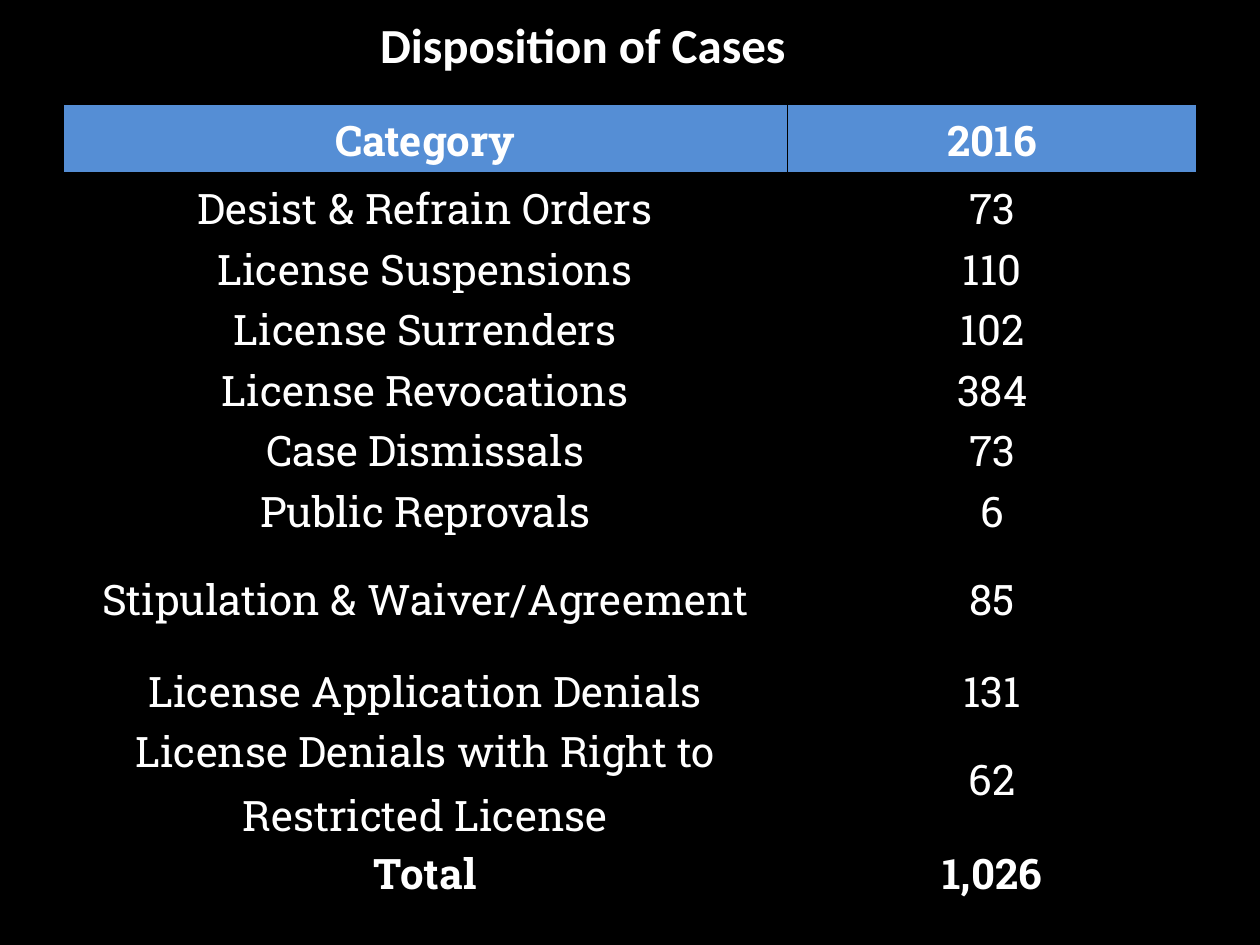
import pptx
import pptx.dml.color
import pptx.enum.text
import pptx.oxml
import pptx.oxml.ns
import pptx.util
from pptx.util import Inches

RGBColor = pptx.dml.color.RGBColor
BLACK = RGBColor(0x00, 0x00, 0x00)
WHITE = RGBColor(0xFF, 0xFF, 0xFF)
BLUE = RGBColor(0x55, 0x8E, 0xD5)

ROWS = [
    ("Category", "2016"),
    ("Desist & Refrain Orders", "73"),
    ("License Suspensions", "110"),
    ("License Surrenders", "102"),
    ("License Revocations", "384"),
    ("Case Dismissals", "73"),
    ("Public Reprovals", "6"),
    ("Stipulation & Waiver/Agreement", "85"),
    ("License Application Denials", "131"),
    ("License Denials with Right to Restricted License", "62"),
    ("Total", "1,026"),
]
ROW_HEIGHT = 0.48
SPECIAL_HEIGHTS = {0: 0.54, 7: 0.95, 9: 0.95, 10: 0.54}
COLUMN_WIDTHS = (5.75, 3.25)


class SlideBuilder:
    title_font = "Calibri"
    table_font = "Roboto Slab"

    def __init__(self, prs):
        self.s = prs.slides.add_slide(prs.slide_layouts[6])
        self.s.background.fill.solid()
        self.s.background.fill.fore_color.rgb = BLACK

    def style(self, p, font, size, bold, after):
        p.alignment = pptx.enum.text.PP_ALIGN.CENTER
        p.line_spacing = 1.15
        p.space_after = pptx.util.Pt(after)
        p.font.name = font
        p.font.size = pptx.util.Pt(size)
        p.font.bold = bold
        p.font.color.rgb = WHITE

    def title(self, text, left, top, width, height):
        sp = self.s.shapes.add_textbox(
            Inches(left), Inches(top), Inches(width), Inches(height))
        tf = sp.text_frame
        tf.word_wrap = True
        tf.text = text
        self.style(tf.paragraphs[0], self.title_font, 28, True, 10)

    def border(self, cell):
        tc_pr = cell._tc.get_or_add_tcPr()
        for i, side in enumerate(("lnL", "lnR", "lnT", "lnB")):
            tc_pr.insert(i, pptx.oxml.parse_xml(
                f'<a:{side} {pptx.oxml.ns.nsdecls("a")} w="12700"><a:solidFill>'
                f'<a:srgbClr val="{BLACK}"/></a:solidFill></a:{side}>'))

    def cell(self, cell, text, header, bold):
        cell.text = text
        cell.margin_left = cell.margin_right = Inches(0.07)
        cell.margin_top = cell.margin_bottom = 0
        anchor = pptx.enum.text.MSO_ANCHOR
        cell.vertical_anchor = anchor.TOP if header else anchor.MIDDLE
        if header:
            cell.fill.solid()
            cell.fill.fore_color.rgb = BLUE
        else:
            cell.fill.background()
        self.style(cell.text_frame.paragraphs[0], self.table_font, 24, bold, 6)
        self.border(cell)

    def table(self, rows, left, top):
        heights = [SPECIAL_HEIGHTS.get(i, ROW_HEIGHT) for i in range(len(rows))]
        table = self.s.shapes.add_table(
            len(rows), len(COLUMN_WIDTHS), Inches(left), Inches(top),
            Inches(sum(COLUMN_WIDTHS)), Inches(sum(heights))).table
        for column, width in zip(table.columns, COLUMN_WIDTHS):
            column.width = Inches(width)
        for i, (values, height) in enumerate(zip(rows, heights)):
            table.rows[i].height = Inches(height)
            header = i == 0
            bold = header or i == len(rows) - 1
            for j, text in enumerate(values):
                self.cell(table.cell(i, j), text, header, bold)


def main():
    prs = pptx.Presentation()
    prs.slide_width, prs.slide_height = Inches(10), Inches(7.5)
    slide = SlideBuilder(prs)

    # Heading
    slide.title("Disposition of Cases", 0, 0, 9.25, 1.17)

    # Case counts by category
    slide.table(ROWS, 0.5, 0.83)

    prs.save("out.pptx")


if __name__ == "__main__":
    main()
